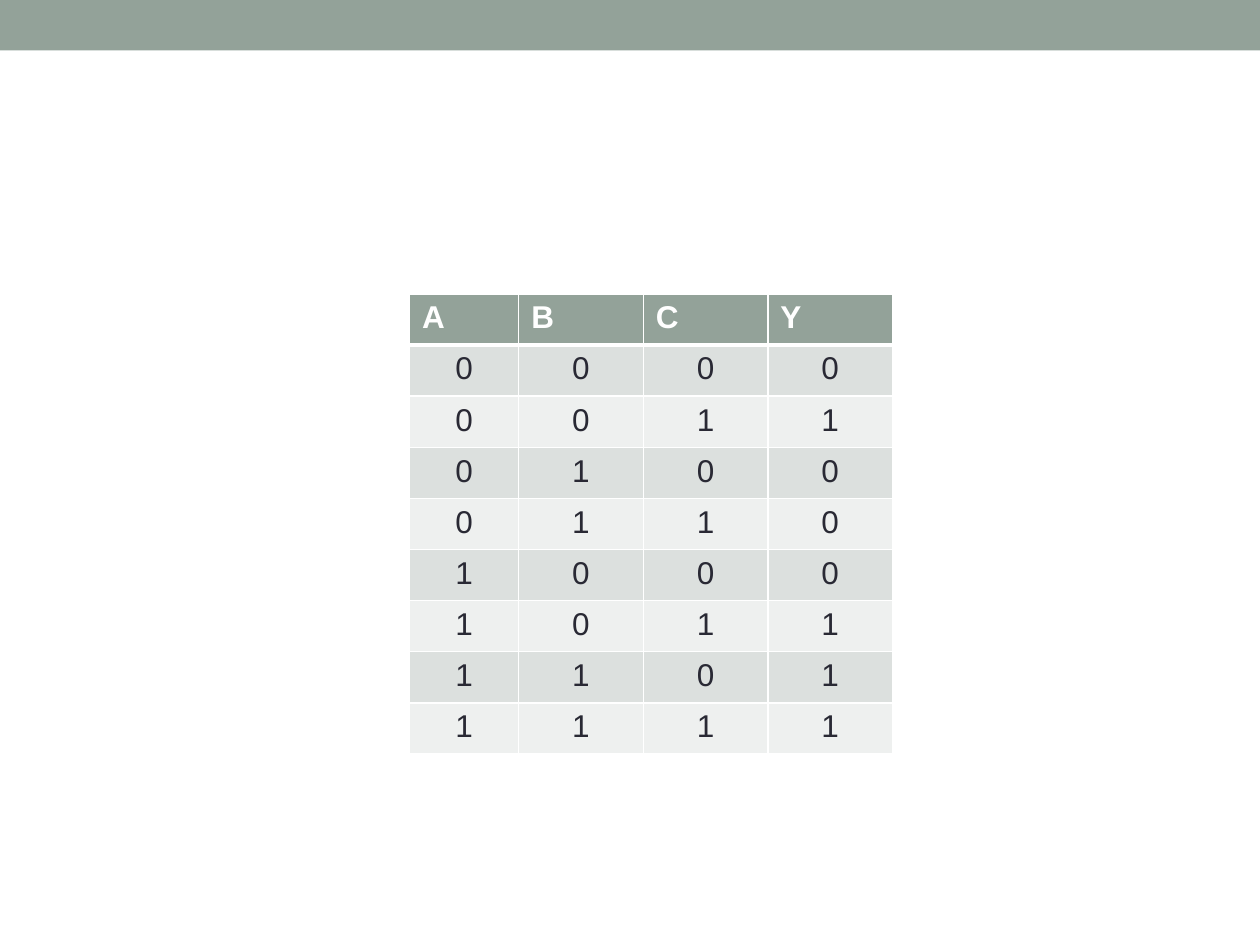
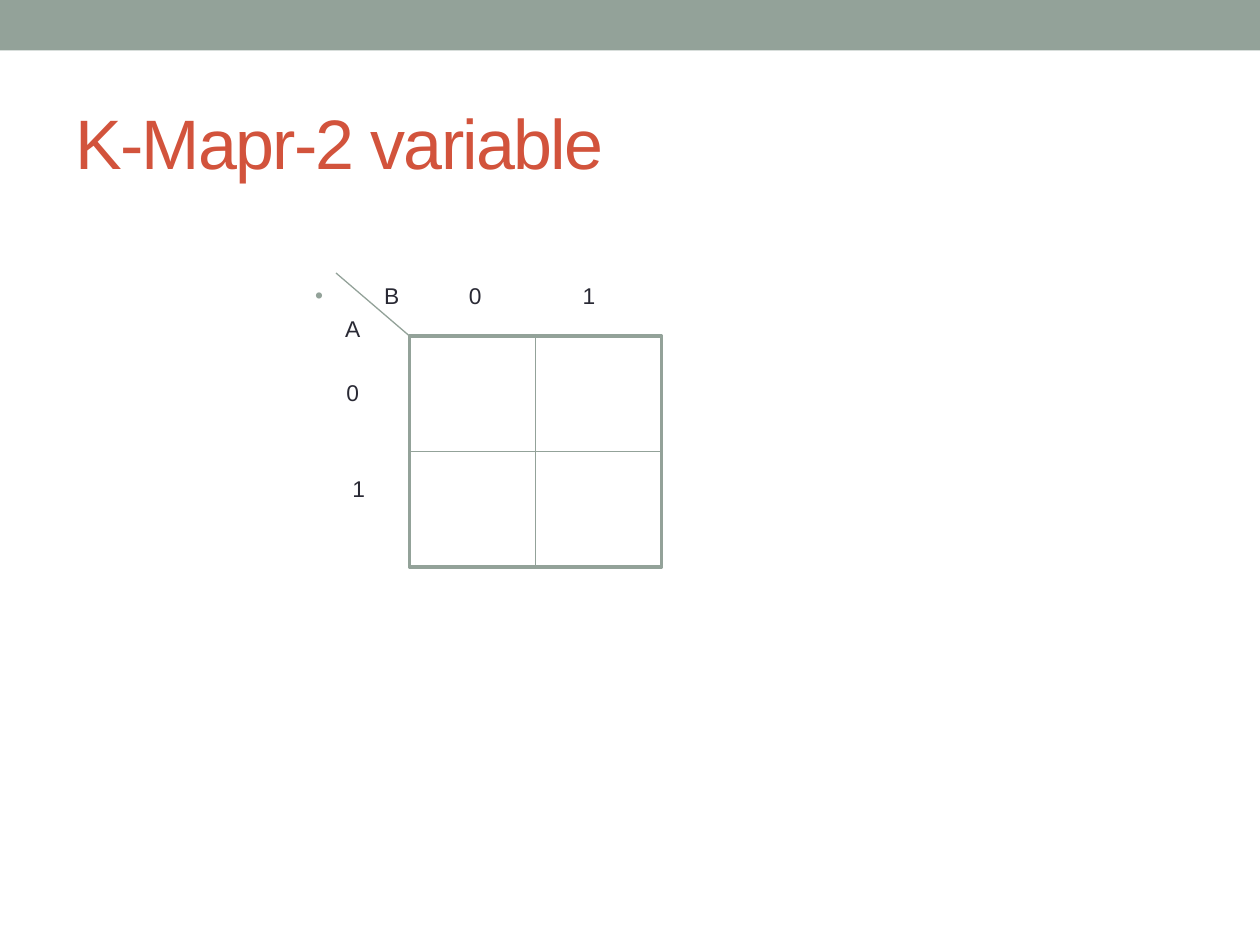
"""Build a truth table slide and a two-variable Karnaugh map slide."""
from itertools import product

from lxml import etree
from pptx import Presentation
from pptx.dml.color import RGBColor
from pptx.enum import shapes, text
from pptx.oxml.ns import qn
from pptx.util import Pt

HEADERS = ["A", "B", "C", "Y"]
OUTPUTS = [0, 1, 0, 0, 0, 1, 1, 1]
TITLE = "K-Mapr-2 variable"
MAP_LABELS = [("0", 271.5, 169), ("1", 336.5, 169), ("A", 201.5, 187.5),
              ("0", 201.5, 224.5), ("1", 205, 279)]

FONT = "Arial"
SAGE = RGBColor(0x93, 0xA2, 0x99)
RUST = RGBColor(0xD2, 0x53, 0x3C)
INK = RGBColor(0x29, 0x29, 0x34)
WHITE = RGBColor(0xFF, 0xFF, 0xFF)
BANDS = [RGBColor(0xDC, 0xE0, 0xDE), RGBColor(0xEE, 0xF0, 0xEF)]

SLIDE_W, SLIDE_H, BAR_H = 720, 540, 28.8
TABLE_X, TABLE_Y, ROW_H = 234, 168, 29.2
COL_WIDTHS = [62.4, 71.2, 71.2, 71.2]
MAP_X, MAP_Y, MAP_W, MAP_H = 234, 192, 144, 132
LABEL_W, LABEL_H, LABEL_SIZE = 20, 16, 13
BULLET_X, BULLET_INDENT = 180, 39.5


def write(tf, content, size=LABEL_SIZE, color=INK, bold=False, align=None, spacing=None):
    p = tf.paragraphs[0]
    p.alignment = align
    r = p.add_run()
    r.text = content
    r.font.name, r.font.size, r.font.bold = FONT, Pt(size), bold
    r.font.color.rgb = color
    if spacing is not None:
        r.font._element.set("spc", str(int(spacing * 100)))
    return p


def add_text(s, content, x, y, w, h, inset=0, **fmt):
    tf = s.shapes.add_textbox(Pt(x), Pt(y), Pt(w), Pt(h)).text_frame
    tf.word_wrap = True
    tf.vertical_anchor = text.MSO_ANCHOR.MIDDLE
    tf.margin_left = tf.margin_right = Pt(inset)
    tf.margin_top = tf.margin_bottom = 0
    return write(tf, content, **fmt)


def add_rect(s, x, y, w, h, fill, line=None, width=0):
    sp = s.shapes.add_shape(shapes.MSO_SHAPE.RECTANGLE, Pt(x), Pt(y), Pt(w), Pt(h))
    sp.shadow.inherit = False
    sp.fill.solid()
    sp.fill.fore_color.rgb = fill
    if line is None:
        sp.line.fill.background()
    else:
        sp.line.color.rgb, sp.line.width = line, Pt(width)


def add_line(s, x1, y1, x2, y2):
    ln = s.shapes.add_connector(shapes.MSO_CONNECTOR.STRAIGHT, Pt(x1), Pt(y1), Pt(x2), Pt(y2))
    ln.line.color.rgb, ln.line.width = SAGE, Pt(0.75)
    etree.SubElement(ln._element.spPr, qn("a:effectLst"))


def set_borders(cell, **widths):
    tc_pr = cell._tc.get_or_add_tcPr()
    for side in "LRTB":
        ln = etree.SubElement(tc_pr, qn("a:ln" + side), w=str(int(Pt(widths.get(side, 1)))))
        fill = etree.SubElement(ln, qn("a:solidFill"))
        etree.SubElement(fill, qn("a:srgbClr"), val=str(WHITE))


def add_bullet(p, indent):
    p_pr = p._p.get_or_add_pPr()
    p_pr.set("marL", str(int(Pt(indent))))
    p_pr.set("indent", str(-int(Pt(indent))))
    color = etree.SubElement(p_pr, qn("a:buClr"))
    etree.SubElement(color, qn("a:srgbClr"), val=str(SAGE))
    etree.SubElement(p_pr, qn("a:buFont"), typeface=FONT)
    etree.SubElement(p_pr, qn("a:buChar"), char="•")


def new_slide(prs):
    s = prs.slides.add_slide(prs.slide_layouts[6])
    add_rect(s, 0, 0, SLIDE_W, BAR_H, SAGE)
    return s


def truth_table(s):
    rows = [HEADERS] + [[*bits, y] for bits, y in zip(product((0, 1), repeat=3), OUTPUTS)]
    table = s.shapes.add_table(len(rows), len(HEADERS), Pt(TABLE_X), Pt(TABLE_Y),
                               Pt(sum(COL_WIDTHS)), Pt(ROW_H * len(rows))).table
    for col, width in zip(table.columns, COL_WIDTHS):
        col.width = Pt(width)
    for i, row in enumerate(rows):
        table.rows[i].height = Pt(ROW_H)
        header = i == 0
        for j, value in enumerate(row):
            cell = table.cell(i, j)
            set_borders(cell, B=3 if header else 1, T=3 if i == 1 else 1)
            cell.fill.solid()
            cell.fill.fore_color.rgb = SAGE if header else BANDS[(i - 1) % 2]
            write(cell.text_frame, str(value), size=18, bold=header,
                  color=WHITE if header else INK,
                  align=None if header else text.PP_ALIGN.CENTER)


def karnaugh_map(s):
    add_text(s, TITLE, 36, 42, 648, 78, inset=7.2, size=40, color=RUST, spacing=-1)
    p = add_text(s, "B", BULLET_X, 169 - LABEL_H / 2, 60, LABEL_H)
    add_bullet(p, BULLET_INDENT)
    for label, x, y in MAP_LABELS:
        add_text(s, label, x - LABEL_W / 2, y - LABEL_H / 2, LABEL_W, LABEL_H,
                 align=text.PP_ALIGN.CENTER)
    add_rect(s, MAP_X, MAP_Y, MAP_W, MAP_H, WHITE, SAGE, 2.08)
    mid_x, mid_y = MAP_X + MAP_W / 2, MAP_Y + MAP_H / 2
    add_line(s, mid_x, MAP_Y, mid_x, MAP_Y + MAP_H)
    add_line(s, MAP_X, mid_y, MAP_X + MAP_W, mid_y)
    add_line(s, MAP_X, MAP_Y, MAP_X - 42, MAP_Y - 36)


def main():
    prs = Presentation()
    prs.slide_width, prs.slide_height = Pt(SLIDE_W), Pt(SLIDE_H)
    truth_table(new_slide(prs))
    karnaugh_map(new_slide(prs))
    prs.save("out.pptx")


if __name__ == "__main__":
    main()
